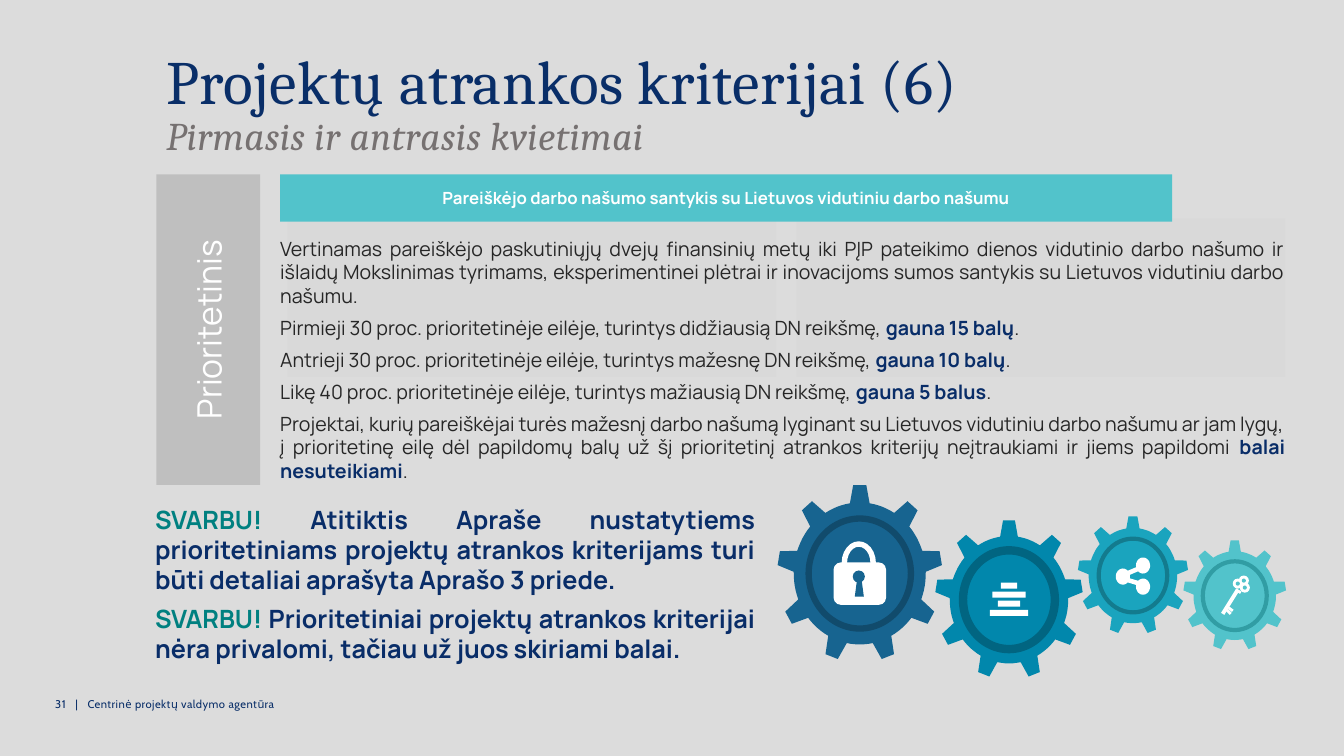
"""Build the slide on priority project selection criteria."""
import math

import lxml.etree
import pptx
import pptx.dml.color
import pptx.enum.shapes
import pptx.enum.text
import pptx.oxml.ns
import pptx.util

Inches = pptx.util.Inches
Pt = pptx.util.Pt
RGBColor = pptx.dml.color.RGBColor
SHAPE = pptx.enum.shapes.MSO_SHAPE
ALIGN = pptx.enum.text.PP_ALIGN
qn = pptx.oxml.ns.qn

BACKGROUND = RGBColor(0xDC, 0xDC, 0xDC)
PANEL = RGBColor(0xD9, 0xD9, 0xD9)
SIDEBAR = RGBColor(0xBF, 0xBF, 0xBF)
WHITE = RGBColor(0xFF, 0xFF, 0xFF)
TITLE_BLUE = RGBColor(0x09, 0x2E, 0x68)
NAVY = RGBColor(0x09, 0x2D, 0x68)
GREY = RGBColor(0x76, 0x71, 0x71)
BODY = RGBColor(0x26, 0x26, 0x26)
GREEN = RGBColor(0x00, 0x80, 0x80)
TURQUOISE = RGBColor(0x52, 0xC3, 0xCB)
TURQUOISE_RIM = RGBColor(0x31, 0x9D, 0xA4)
CYAN = RGBColor(0x1A, 0xA4, 0xBE)
CYAN_RIM = RGBColor(0x13, 0x7B, 0x8E)
AZURE = RGBColor(0x01, 0x87, 0xAC)
AZURE_RIM = RGBColor(0x01, 0x65, 0x81)
STEEL = RGBColor(0x17, 0x64, 0x90)
STEEL_RIM = RGBColor(0x11, 0x4B, 0x6C)

TITLE = "Projektų atrankos kriterijai (6)"
SUBTITLE = "Pirmasis ir antrasis kvietimai"
CRITERION = "Pareiškėjo darbo našumo santykis su Lietuvos vidutiniu darbo našumu"
CATEGORY = "Prioritetinis"
FOOTER = "31\t|\tCentrinė projektų valdymo agentūra"
RULES = [
    ("Vertinamas pareiškėjo paskutiniųjų dvejų finansinių metų iki PĮP pateikimo dienos "
     "vidutinio darbo našumo ir išlaidų Mokslinimas tyrimams, eksperimentinei plėtrai ir "
     "inovacijoms sumos santykis su Lietuvos vidutiniu darbo našumu.", ""),
    ("Pirmieji 30 proc. prioritetinėje eilėje, turintys didžiausią DN reikšmę, ", "gauna 15 balų"),
    ("Antrieji 30 proc. prioritetinėje eilėje, turintys mažesnę DN reikšmę, ", "gauna 10 balų"),
    ("Likę 40 proc. prioritetinėje eilėje, turintys mažiausią DN reikšmę, ", "gauna 5 balus"),
    ("Projektai, kurių pareiškėjai turės mažesnį darbo našumą lyginant su Lietuvos vidutiniu "
     "darbo našumu ar jam lygų, į prioritetinę eilę dėl papildomų balų už šį prioritetinį "
     "atrankos kriterijų neįtraukiami ir jiems papildomi ", "balai nesuteikiami"),
]
WARNING = "SVARBU! "
WARNINGS = [
    "Atitiktis Apraše nustatytiems prioritetiniams projektų atrankos kriterijams turi būti "
    "detaliai aprašyta Aprašo 3 priede.",
    "Prioritetiniai projektų atrankos kriterijai nėra privalomi, tačiau už juos skiriami balai.",
]
GEARS = {
    "list": (10.01, 5.95, 0.79, AZURE, AZURE_RIM, 6),
    "lock": (8.53, 5.69, 0.88, STEEL, STEEL_RIM, 4.5),
    "key": (12.25, 5.91, 0.55, TURQUOISE, TURQUOISE_RIM, 3),
    "share": (11.24, 5.71, 0.59, CYAN, CYAN_RIM, 3),
}
GEAR_TEETH, GEAR_ASPECT, GEAR_BODY, GEAR_RIM = 9, 0.93, 0.8, 0.62
BAR_WIDTHS = (0.16, 0.33, 0.22, 0.38)
HUB, UPPER, LOWER = (11.14, 5.72), (11.34, 5.61), (11.34, 5.82)
SHARE_ARCS = ((HUB, 46, 314), (UPPER, 168, 494), (HUB, -12, 12), (LOWER, 226, 552))
KEY_LOBES = ((12.28, 5.79), (12.34, 5.76), (12.35, 5.83))
KEY_STROKES = (
    (12.28, 5.85, 12.13, 6.09, 2.75), (12.26, 5.85, 12.31, 5.88, 2),
    (12.17, 6.05, 12.21, 6.09, 2), (12.19, 6.03, 12.23, 6.06, 2),
)


def paint(shape, colour, rim=None, rim_width=0):
    shape.shadow.inherit = False
    shape.fill.solid()
    shape.fill.fore_color.rgb = colour
    if rim is None:
        shape.line.fill.background()
    else:
        shape.line.color.rgb = rim
        shape.line.width = Pt(rim_width)


def add_solid(shapes, kind, left, top, width, height, colour, **rim):
    shape = shapes.add_shape(kind, Inches(left), Inches(top), Inches(width), Inches(height))
    paint(shape, colour, **rim)
    return shape


def add_disc(shapes, x, y, rx, ry, colour, **rim):
    add_solid(shapes, SHAPE.OVAL, x - rx, y - ry, 2 * rx, 2 * ry, colour, **rim)


def add_outline(shapes, contours, colour):
    contours = [[(1000 * x, 1000 * y) for x, y in contour] for contour in contours]
    builder = shapes.build_freeform(*contours[0][0], scale=Inches(1) / 1000)
    for contour in contours:
        if contour is not contours[0]:
            builder.move_to(*contour[0])
        builder.add_line_segments(contour[1:], close=True)
    paint(builder.convert_to_shape(), colour)


def add_stroke(shapes, x1, y1, x2, y2, width):
    stroke = shapes.add_connector(pptx.enum.shapes.MSO_CONNECTOR.STRAIGHT,
                                  Inches(x1), Inches(y1), Inches(x2), Inches(y2))
    stroke.line.color.rgb = WHITE
    stroke.line.width = Pt(width)
    lxml.etree.SubElement(stroke._element.spPr, qn("a:effectLst"))


def write(frame, paragraphs, font, align, after=0, spacing=None, tracking=None, tabs=()):
    """Fill a frame with paragraphs of (text, size, colour, bold, italic) runs."""
    frame.word_wrap = True
    for index, runs in enumerate(paragraphs):
        paragraph = frame.paragraphs[0] if index == 0 else frame.add_paragraph()
        paragraph.alignment = align
        paragraph.space_before = Pt(0)
        paragraph.space_after = Pt(after)
        if spacing:
            paragraph.line_spacing = spacing
        if tabs:
            stops = lxml.etree.SubElement(paragraph._p.get_or_add_pPr(), qn("a:tabLst"))
            for stop in tabs:
                lxml.etree.SubElement(stops, qn("a:tab"), pos=str(Inches(stop)), algn="l")
        for text, size, colour, bold, italic in runs:
            run = paragraph.add_run()
            run.text = text
            run.font.name, run.font.size = font, Pt(size)
            run.font.bold, run.font.italic = bold, italic
            run.font.color.rgb = colour
            if tracking:
                run._r.get_or_add_rPr().set("spc", str(tracking))


def add_text(shapes, left, top, width, height):
    return shapes.add_textbox(Inches(left), Inches(top), Inches(width), Inches(height)).text_frame


def add_gear(shapes, x, y, radius, colour, rim, rim_width):
    def point(share, angle):
        return (x + radius * GEAR_ASPECT * share * math.sin(angle),
                y - radius * share * math.cos(angle))

    pitch, root, tip = 2 * math.pi / GEAR_TEETH, 0.15, 0.08
    outline = []
    for tooth in range(GEAR_TEETH):
        middle = tooth * pitch
        outline += [point(1, middle - tip), point(1, middle + tip)]
        outline += [point(GEAR_BODY, middle + root + (pitch - 2 * root) * step / 6)
                    for step in range(7)]
    add_outline(shapes, [outline], colour)
    add_disc(shapes, x, y, radius * GEAR_RIM * GEAR_ASPECT, radius * GEAR_RIM,
             colour, rim=rim, rim_width=rim_width)


def add_icon(shapes, icon, colour):
    if icon == "list":
        bars = []
        for row, width in enumerate(BAR_WIDTHS):
            left, right, top = 10.01 - width / 2, 10.01 + width / 2, 5.78 + 0.09 * row
            bars.append([(left, top), (right, top), (right, top + 0.06), (left, top + 0.06)])
        add_outline(shapes, bars, WHITE)
    elif icon == "lock":
        shackle = add_solid(shapes, SHAPE.BLOCK_ARC, 8.35, 5.37, 0.34, 0.43, WHITE)
        shackle.adjustments[2] = 0.16
        add_solid(shapes, SHAPE.ROUNDED_RECTANGLE, 8.27, 5.58, 0.52, 0.42, WHITE)
        add_disc(shapes, 8.52, 5.72, 0.06, 0.06, colour)
        add_solid(shapes, SHAPE.TRAPEZOID, 8.48, 5.75, 0.09, 0.17, colour)
    elif icon == "share":
        outline = []
        for (x, y), start, end in SHARE_ARCS:
            angles = [math.radians(start + (end - start) * step / 24) for step in range(25)]
            outline += [(x + 0.07 * math.cos(a), y + 0.08 * math.sin(a)) for a in angles]
        add_outline(shapes, [outline], WHITE)
    else:
        for stroke in KEY_STROKES:
            add_stroke(shapes, *stroke)
        for size, tint in ((0.05, WHITE), (0.02, colour)):
            for lobe in KEY_LOBES:
                add_disc(shapes, *lobe, size, size, tint)


def main():
    deck = pptx.Presentation()
    deck.slide_width, deck.slide_height = Inches(40 / 3), Inches(7.5)
    slide = deck.slides.add_slide(deck.slide_layouts[5])
    slide.background.fill.solid()
    slide.background.fill.fore_color.rgb = BACKGROUND
    shapes = slide.shapes
    for left in (2.85, 7.9):
        add_solid(shapes, SHAPE.RECTANGLE, left, 2.17, 4.85, 1.57, PANEL)
    banner = add_solid(shapes, SHAPE.RECTANGLE, 2.78, 1.73, 8.85, 0.47, TURQUOISE)
    write(banner.text_frame, [[(CRITERION, 12, WHITE, True, False)]], "Manrope", ALIGN.CENTER)
    sidebar = add_solid(shapes, SHAPE.RECTANGLE, 1.55, 1.73, 1.03, 3.08, SIDEBAR)
    sidebar.rotation = 180
    write(sidebar.text_frame, [[(CATEGORY, 24, WHITE, False, False)]], "Manrope", ALIGN.CENTER)
    sidebar.text_frame._txBody.bodyPr.set("vert", "vert")
    rules = add_text(shapes, 2.78, 2.35, 9.97, 2.46)
    rules.margin_left = rules.margin_right = rules.margin_top = rules.margin_bottom = 0
    write(rules, [[(text, 14, BODY, False, False)]
                  + ([(score, 14, NAVY, True, False), (".", 14, BODY, False, False)] if score else [])
                  for text, score in RULES], "Manrope", ALIGN.JUSTIFY, after=6)
    write(add_text(shapes, 0.45, 6.87, 3.2, 0.4), [[(FOOTER, 8, TITLE_BLUE, False, False)]],
          "Cabin", ALIGN.LEFT, tracking=30, tabs=(0.2, 0.32))
    for icon, gear in GEARS.items():
        group = shapes.add_group_shape().shapes
        add_gear(group, *gear)
        add_icon(group, icon, gear[3])
    title = shapes.title
    title.left, title.top, title.width, title.height = map(Inches, (1.55, 0.52, 11.59, 1.1))
    title.text_frame.auto_size = pptx.enum.text.MSO_AUTO_SIZE.NONE
    title.text_frame.vertical_anchor = pptx.enum.text.MSO_ANCHOR.TOP
    write(title.text_frame, [[(TITLE, 44, TITLE_BLUE, False, False)], [(SUBTITLE, 28, GREY, False, True)]],
          "Cambria", ALIGN.LEFT, after=3, spacing=0.8, tracking=40)
    write(add_text(shapes, 1.44, 4.95, 6.15, 2),
          [[(WARNING, 18, GREEN, True, False), (text, 18, NAVY, True, False)] for text in WARNINGS],
          "Manrope", ALIGN.JUSTIFY, after=6)
    deck.save("out.pptx")


if __name__ == "__main__":
    main()
